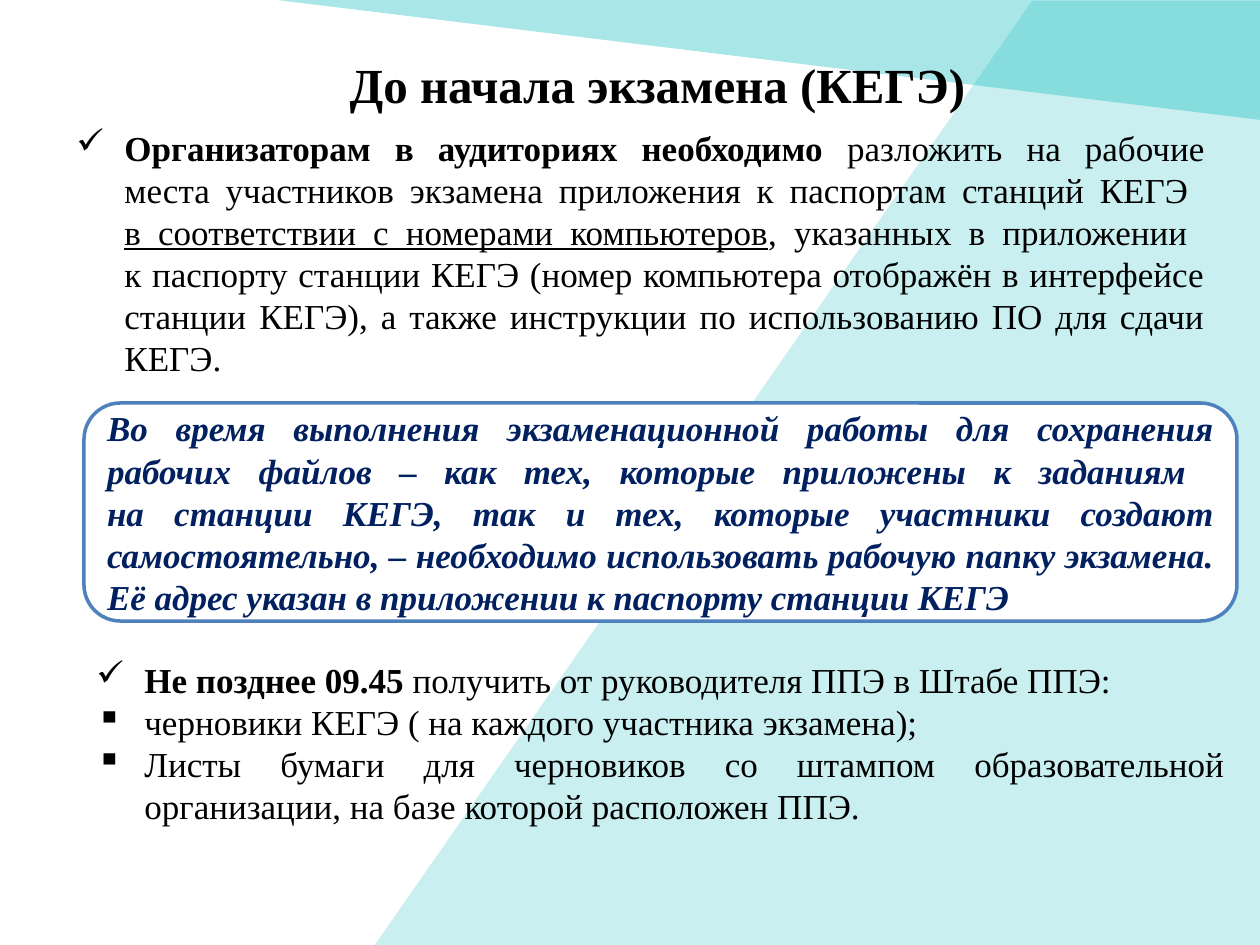
from lxml import etree
from pptx import Presentation
from pptx.dml.color import RGBColor
from pptx.enum.shapes import MSO_SHAPE
from pptx.enum.text import MSO_ANCHOR, PP_ALIGN
from pptx.oxml.ns import qn
from pptx.util import Pt

EMU_PER_PX = 914400 / 126
ROUNDED = MSO_SHAPE.ROUNDED_RECTANGLE
MIDDLE = MSO_ANCHOR.MIDDLE
CENTER, JUSTIFY = PP_ALIGN.CENTER, PP_ALIGN.JUSTIFY

COLORS = {"teal": "20C0C4", "black": "000000", "navy": "002060",
          "white": "FFFFFF", "border": "4F81BD"}
BODY = {"name": "Times New Roman", "size": Pt(20)}
BOLD = {"bold": True}
UNDERLINED = {"underline": True}
CHECK, SQUARE = "✓", "▪"
HANGING = 48

TITLE = "До начала экзамена (КЕГЭ)"
SEATING = [
    ("Организаторам в аудиториях необходимо ", BOLD),
    ("разложить на рабочие места участников экзамена приложения "
     "к паспортам станций КЕГЭ \n", {}),
    ("в соответствии с номерами компьютеров", UNDERLINED),
    (", указанных в приложении \nк паспорту станции КЕГЭ (номер компьютера "
     "отображён в интерфейсе станции КЕГЭ), а также инструкции "
     "по использованию ПО для сдачи КЕГЭ.", {}),
]
REMINDER = (
    "Во время выполнения экзаменационной работы для сохранения рабочих файлов "
    "– как тех, которые приложены к заданиям \nна станции КЕГЭ, так и тех, "
    "которые участники создают самостоятельно, – необходимо использовать "
    "рабочую папку экзамена. Её адрес указан в приложении к паспорту "
    "станции КЕГЭ")
MATERIALS = [
    (CHECK, [("Не позднее 09.45 ", BOLD),
             ("получить от руководителя ППЭ в Штабе ППЭ:", {})]),
    (SQUARE, [("черновики КЕГЭ ( на каждого участника экзамена);", {})]),
    (SQUARE, [("Листы бумаги для черновиков со штампом образовательной "
               "организации, на базе которой расположен ППЭ.", {})]),
]


def px(length):
    return round(length * EMU_PER_PX)


def rgb(color):
    return RGBColor.from_string(COLORS[color])


def add_facet(slide, corners, opacity):
    """Translucent background polygon."""
    builder = slide.shapes.build_freeform(*corners[0], scale=EMU_PER_PX)
    builder.add_line_segments(corners[1:], close=True)
    facet = builder.convert_to_shape()
    facet.shadow.inherit = False
    facet.line.fill.background()
    facet.fill.solid()
    facet.fill.fore_color.rgb = rgb("teal")
    tint = facet.fill._xPr.find(qn("a:solidFill"))[0]
    etree.SubElement(tint, qn("a:alpha"), val=str(opacity * 1000))


def set_bullet(paragraph, mark):
    properties = paragraph._p.get_or_add_pPr()
    properties.set("marL", str(px(HANGING)))
    properties.set("indent", str(-px(HANGING)))
    etree.SubElement(properties, qn("a:buChar"), char=mark)


def write_runs(paragraph, pieces, color="black", align=JUSTIFY):
    paragraph.alignment = align
    for text, emphasis in pieces:
        for index, line in enumerate(text.split("\n")):
            if index:
                paragraph.add_line_break()
            if not line:
                continue
            run = paragraph.add_run()
            run.text = line
            for attribute, value in {**BODY, **emphasis}.items():
                setattr(run.font, attribute, value)
            run.font.color.rgb = rgb(color)


def add_text_frame(slide, box):
    frame = slide.shapes.add_textbox(*map(px, box)).text_frame
    frame.word_wrap = True
    return frame


def add_list(slide, box, items):
    frame = add_text_frame(slide, box)
    for index, (mark, pieces) in enumerate(items):
        paragraph = frame.add_paragraph() if index else frame.paragraphs[0]
        set_bullet(paragraph, mark)
        write_runs(paragraph, pieces)


def add_callout(slide, box, text):
    callout = slide.shapes.add_shape(ROUNDED, *map(px, box))
    callout.shadow.inherit = False
    callout.fill.solid()
    callout.fill.fore_color.rgb = rgb("white")
    callout.line.color.rgb = rgb("border")
    callout.line.width = Pt(2)
    frame = callout.text_frame
    frame.word_wrap = True
    frame.vertical_anchor = MIDDLE
    write_runs(frame.paragraphs[0], [(text, {"bold": True, "italic": True})],
               "navy")


def main():
    deck = Presentation()
    deck.slide_width, deck.slide_height = px(1260), px(945)
    slide = deck.slides.add_slide(deck.slide_layouts[6])

    # Background facets
    add_facet(slide, [(1261, 1), (1032, 1), (372, 949), (1261, 949)], 24)
    add_facet(slide, [(277, 0), (1261, 120), (1261, -1)], 39)

    # Title
    heading = add_text_frame(slide, (171, 48, 973, 72))
    write_runs(heading.paragraphs[0], [(TITLE, {"bold": True, "size": Pt(28)})],
               align=CENTER)

    # Instructions and reminder
    add_list(slide, (64, 120, 1153, 267), [(CHECK, SEATING)])
    add_callout(slide, (84, 403, 1153, 218), REMINDER)
    add_list(slide, (84, 652, 1153, 224), MATERIALS)

    deck.save("out.pptx")


if __name__ == "__main__":
    main()
